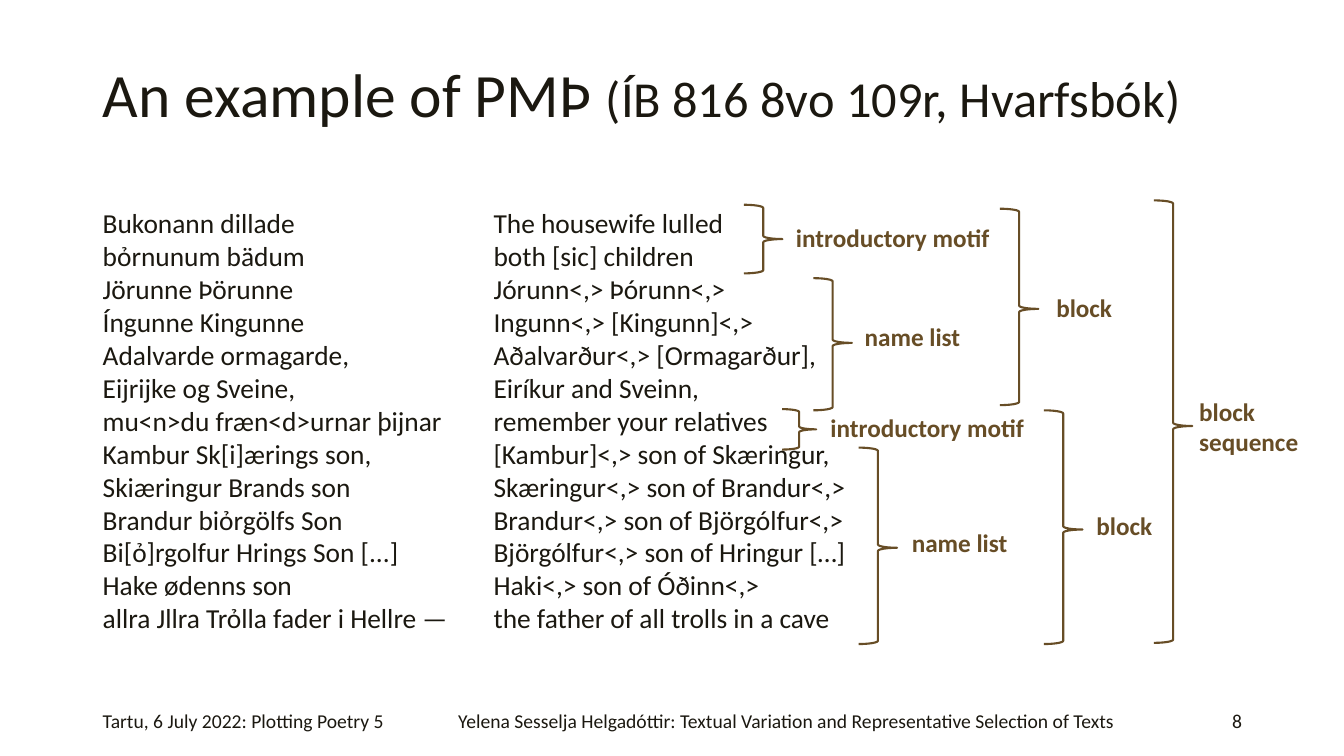
from pptx import Presentation
from pptx.dml.color import RGBColor
from pptx.enum.shapes import MSO_SHAPE
from pptx.enum.text import MSO_ANCHOR, PP_ALIGN
from pptx.util import Cm, Pt

BRACE = MSO_SHAPE.RIGHT_BRACE
TOP, MIDDLE = MSO_ANCHOR.TOP, MSO_ANCHOR.MIDDLE
LEFT, CENTER, RIGHT = PP_ALIGN.LEFT, PP_ALIGN.CENTER, PP_ALIGN.RIGHT
FONT, INK, BROWN = "Calibri", "1B1810", "674D26"

# Content
TITLE = [("An example of PMÞ ", 44), ("(ÍB 816 8vo 109r, Hvarfsbók)", 36)]
VERSE = [
    ("Bukonann dillade", "The housewife lulled"),
    ("bỏrnunum bädum", "both [sic] children"),
    ("Jörunne Þörunne", "Jórunn<,> Þórunn<,>"),
    ("Íngunne Kingunne", "Ingunn<,> [Kingunn]<,>"),
    ("Adalvarde ormagarde,", "Aðalvarður<,> [Ormagarður],"),
    ("Eijrijke og Sveine,", "Eiríkur and Sveinn,"),
    ("mu<n>du fræn<d>urnar þijnar", "remember your relatives"),
    ("Kambur Sk[i]ærings son,", "[Kambur]<,> son of Skæringur,"),
    ("Skiæringur Brands son", "Skæringur<,> son of Brandur<,>"),
    ("Brandur biỏrgölfs Son", "Brandur<,> son of Björgólfur<,>"),
    ("Bi[ỏ]rgolfur Hrings Son [...]", "Björgólfur<,> son of Hringur […]"),
    ("Hake ødenns son", "Haki<,> son of Óðinn<,>"),
    ("allra Jllra Trỏlla fader i Hellre —", "the father of all trolls in a cave"),
]
COLUMNS = [(2.34, 14.4), (12.19, 10.44)]  # left, width
FOOTER = [  # text, left, width, alignment
    ("Tartu, 6 July 2022: Plotting Poetry 5", 2.34, 8.03, LEFT),
    ("Yelena Sesselja Helgadóttir: Textual Variation and Representative "
     "Selection of Texts ", 9.88, 19.99, CENTER),
    ("8", 29.9, 1.65, RIGHT),
]
BRACES = [  # brace (left, top, width, height), point, label, label (left, top, width)
    ((18.75, 5.16, 0.97, 1.73), 0.5, "introductory motif", (19.81, 5.49, 5.79)),
    ((20.5, 7.01, 0.97, 3.33), 0.49, "name list", (21.54, 7.98, 3.5)),
    ((21.64, 11.28, 0.97, 4.95), 0.51, "name list", (22.73, 13.16, 3.5)),
    ((19.71, 10.31, 0.86, 1.02), 0.5, "introductory motif", (20.68, 10.26, 5.79)),
    ((25.2, 5.26, 0.97, 4.95), 0.51, "block", (26.37, 7.24, 3.5)),
    ((26.31, 10.34, 0.97, 5.89), 0.51, "block", (27.38, 12.73, 3.5)),
    ((29.08, 5.05, 0.97, 11.15), 0.51, "block sequence", (29.97, 9.86, 3.5)),
]


def rgb(color):
    return RGBColor.from_string(color)


def style(font, size, color=INK, bold=False):
    font.name, font.size, font.bold = FONT, Pt(size), bold
    font.color.rgb = rgb(color)


def add_text(lines, box, size, color=INK, bold=False, align=LEFT, anchor=TOP, spacing=None):
    tf = s.shapes.add_textbox(*map(Cm, box)).text_frame
    tf.word_wrap, tf.vertical_anchor = True, anchor
    tf.text = "\n".join(lines)
    for p in tf.paragraphs:
        p.alignment = align
        p.line_spacing = spacing
        style(p.font, size, color, bold)


prs = Presentation()
prs.slide_width, prs.slide_height = Cm(33.87), Cm(19.05)
s = prs.slides.add_slide(prs.slide_layouts[5])

# Title
title = s.shapes.title
title.left, title.top, title.width, title.height = map(Cm, (2.34, 0.61, 29.21, 3.68))
title.text_frame.vertical_anchor = MIDDLE
p = title.text_frame.paragraphs[0]
p.alignment, p.line_spacing = LEFT, 0.9
for text, size in TITLE:
    r = p.add_run()
    r.text = text
    style(r.font, size)

# Verse and translation
for lines, (left, width) in zip(zip(*VERSE), COLUMNS):
    add_text(lines, (left, 5.08, width, 12.09), 19.6, spacing=Pt(23.5))

# Footer
for text, left, width, align in FOOTER:
    add_text([text], (left, 17.65, width, 1.02), 14, align=align, anchor=MIDDLE)

# Braces with their labels
for box, point, label, (left, top, width) in BRACES:
    sp = s.shapes.add_shape(BRACE, *map(Cm, box))
    sp.shadow.inherit = False
    sp.fill.background()
    sp.line.color.rgb, sp.line.width = rgb(BROWN), Pt(1.5)
    sp.adjustments[1] = point
    height = 1.8 if label == "block sequence" else 1.02
    add_text([label], (left, top, width, height), 18, BROWN, True)

prs.save("out.pptx")
